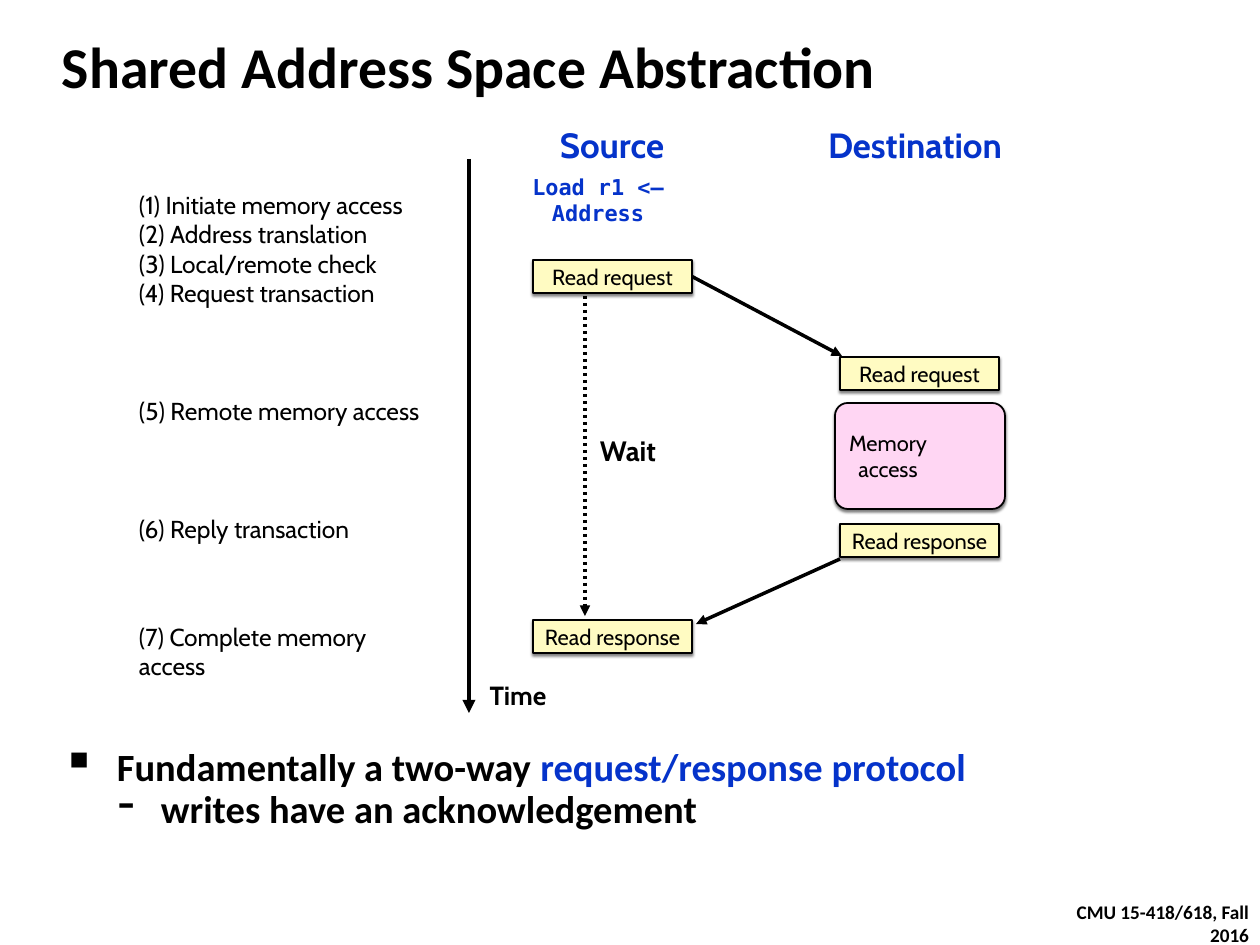
from lxml.etree import SubElement
from pptx import Presentation
from pptx.dml.color import RGBColor
from pptx.enum.dml import MSO_LINE
from pptx.enum.shapes import MSO_CONNECTOR, MSO_SHAPE
from pptx.enum.text import MSO_ANCHOR as ANCHOR, PP_ALIGN as ALIGN
from pptx.oxml.ns import qn
from pptx.util import Emu, Pt

COLORS = {"black": "000000", "blue": "0533CA", "yellow": "FFFBC2", "pink": "FFD6F3"}
PX_PER_INCH = 63
INSET = 4
BOX_W, BOX_H = 159, 33
SOURCE_X, DESTINATION_X = 533, 840

# Steps with the space in points before each one
STEPS = [
    ("(1) Initiate memory access", 0),
    ("(2) Address translation", 0),
    ("(3) Local/remote check", 0),
    ("(4) Request transaction", 0),
    ("(5) Remote memory access", 101),
    ("(6) Reply transaction", 101),
    ("(7) Complete memory access", 90),
]


def px(length):
    return Emu(round(length * 914400 / PX_PER_INCH))


def color(name):
    return RGBColor.from_string(COLORS[name])


def write(paragraph, text, size=25, font="Cabin", ink="black", bold=False, align=ALIGN.LEFT):
    paragraph.alignment = align
    run = paragraph.add_run()
    run.text = text
    run.font.size = Pt(size)
    run.font.name = font
    run.font.bold = bold
    run.font.color.rgb = color(ink)


def set_up_frame(frame, anchor, right_inset=INSET):
    frame.word_wrap = True
    frame.vertical_anchor = anchor
    frame.margin_left = frame.margin_top = frame.margin_bottom = px(INSET)
    frame.margin_right = px(right_inset)
    return frame


def add_frame(slide, x, y, w, h, anchor=ANCHOR.TOP):
    return set_up_frame(slide.shapes.add_textbox(px(x), px(y), px(w), px(h)).text_frame, anchor)


def add_label(slide, text, x, y, w, h, anchor=ANCHOR.MIDDLE, **style):
    write(add_frame(slide, x, y, w, h, anchor).paragraphs[0], text, **style)


def add_shadow(shape):
    effects = SubElement(shape._element.spPr, qn("a:effectLst"))
    shadow = SubElement(effects, qn("a:outerShdw"), blurRad=str(Pt(3)), dist=str(Pt(2)),
                        dir="5400000", algn="ctr", rotWithShape="0")
    black = SubElement(shadow, qn("a:srgbClr"), val=COLORS["black"])
    SubElement(black, qn("a:alpha"), val="50000")


def add_box(slide, text, x, y, w=BOX_W, h=BOX_H, fill="yellow", kind=MSO_SHAPE.RECTANGLE,
            right_inset=INSET):
    box = slide.shapes.add_shape(kind, px(x), px(y), px(w), px(h))
    box.fill.solid()
    box.fill.fore_color.rgb = color(fill)
    box.line.color.rgb = color("black")
    box.line.width = Pt(2)
    add_shadow(box)
    frame = set_up_frame(box.text_frame, ANCHOR.MIDDLE, right_inset)
    write(frame.paragraphs[0], text, align=ALIGN.CENTER)
    return box


def add_arrow(slide, x1, y1, x2, y2, width=4, dash=None):
    arrow = slide.shapes.add_connector(MSO_CONNECTOR.STRAIGHT, px(x1), px(y1), px(x2), px(y2))
    arrow.line.color.rgb = color("black")
    arrow.line.width = Pt(width)
    if dash:
        arrow.line.dash_style = dash
    SubElement(arrow.line._get_or_add_ln(), qn("a:tailEnd"), type="triangle")
    SubElement(arrow._element.spPr, qn("a:effectLst"))
    return arrow


def set_bullet(paragraph, symbol, percent, margin, hanging, level=0):
    paragraph.level = level
    paragraph.line_spacing = 0.8
    paragraph.space_before = Pt(6)
    properties = paragraph._p.get_or_add_pPr()
    properties.set("marL", str(px(margin)))
    properties.set("indent", str(-px(hanging)))
    SubElement(properties, qn("a:buSzPct"), val=str(percent * 1000))
    SubElement(properties, qn("a:buChar"), char=symbol)


def add_steps(slide):
    frame = add_frame(slide, 135, 186, 296, 469)
    for number, (step, gap) in enumerate(STEPS):
        paragraph = frame.add_paragraph() if number else frame.paragraphs[0]
        paragraph.space_before = Pt(gap)
        write(paragraph, step, size=28)


def add_takeaways(slide):
    frame = add_frame(slide, 58, 748, 1113, 109)
    style = {"size": 44, "font": "Calibri", "bold": True}
    protocol = frame.paragraphs[0]
    set_bullet(protocol, "▪", 120, margin=55, hanging=55)
    write(protocol, "Fundamentally a two-way ", **style)
    write(protocol, "request/response protocol", ink="blue", **style)
    writes = frame.add_paragraph()
    set_bullet(writes, "-", 130, margin=99, hanging=43, level=1)
    write(writes, "writes have an acknowledgement", **style)


def main():
    deck = Presentation()
    deck.slide_width, deck.slide_height = px(1260), px(945)
    slide = deck.slides.add_slide(deck.slide_layouts[6])

    # Title and footer
    add_label(slide, "Shared Address Space Abstraction", 58, 27, 1113, 77,
              anchor=ANCHOR.TOP, size=66, font="Calibri", bold=True)
    add_label(slide, "CMU 15-418/618, Fall 2016", 1040, 910, 213, 27,
              size=22, font="Calibri", bold=True, align=ALIGN.RIGHT)

    # Column headings and the load instruction
    heading = {"ink": "blue", "bold": True, "align": ALIGN.CENTER}
    add_label(slide, "Source", 542, 124, 140, 42, size=40, **heading)
    add_label(slide, "Destination", 815, 124, 200, 42, size=40, **heading)
    add_label(slide, "Load r1 <— Address", 518, 186, 160, 28, font="DejaVu Sans Mono", **heading)

    # Messages at both ends
    request = add_box(slide, "Read request", SOURCE_X, 260)
    add_box(slide, "Read response", SOURCE_X, 620)
    add_box(slide, "Read request", DESTINATION_X, 357)
    add_box(slide, "Read response", DESTINATION_X, 524)
    memory = add_box(slide, "Memory access", 835, 403, 170, 106, fill="pink",
                     kind=MSO_SHAPE.ROUNDED_RECTANGLE, right_inset=68)
    memory.adjustments[0] = 0.12

    # Request, reply and wait
    sent = add_arrow(slide, 692, 276, 842, 356)
    sent.begin_connect(request, 3)
    add_arrow(slide, 840, 559, 696, 624)
    add_arrow(slide, 585, 296, 585, 616, dash=MSO_LINE.ROUND_DOT)
    add_label(slide, "Wait", 588, 433, 80, 35, size=32, bold=True, align=ALIGN.CENTER)

    # Time axis
    add_arrow(slide, 469, 159, 469, 713, width=5)
    add_label(slide, "Time", 478, 678, 80, 34, size=30, bold=True, align=ALIGN.CENTER)

    add_steps(slide)
    add_takeaways(slide)
    deck.save("out.pptx")


if __name__ == "__main__":
    main()
